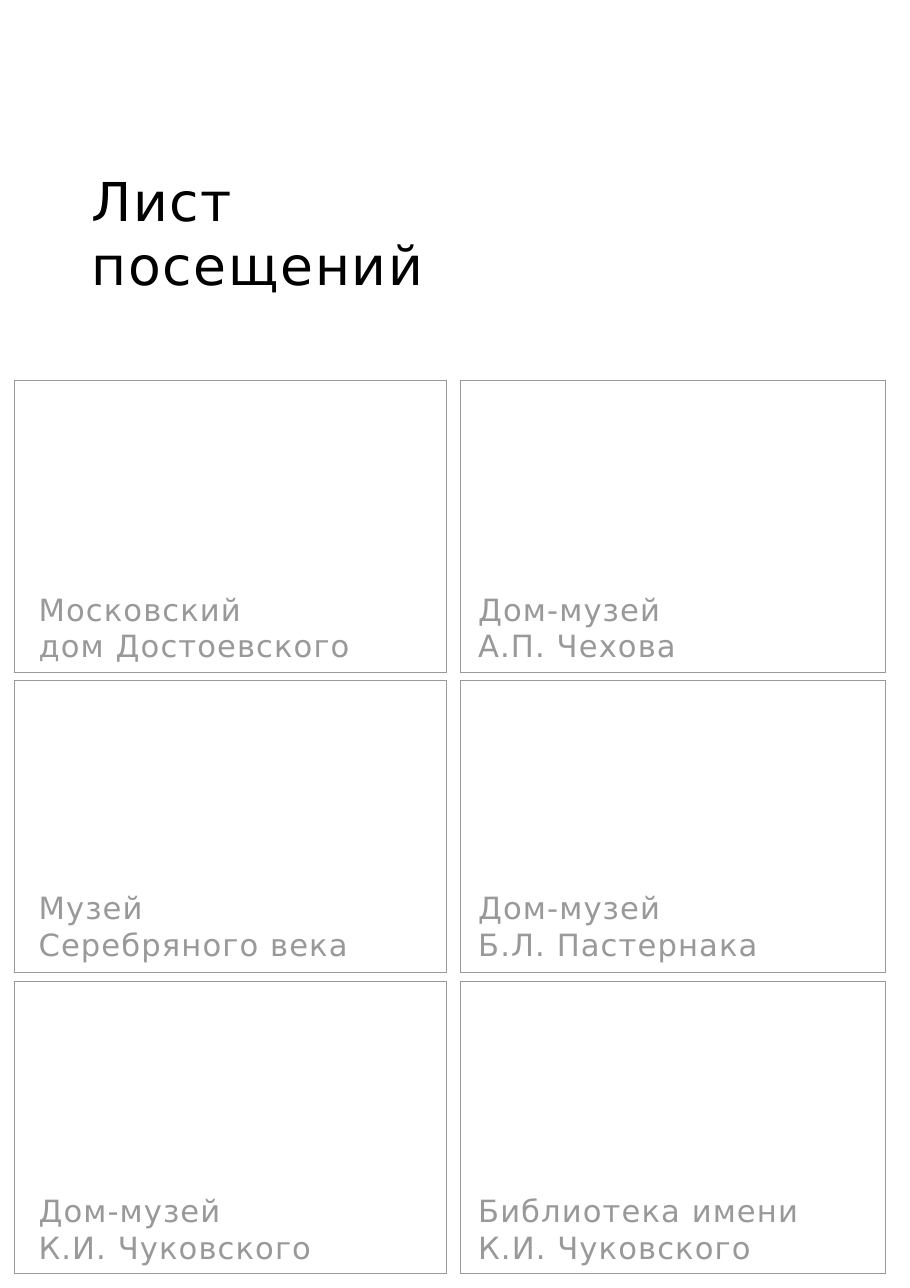
from pptx import Presentation
from pptx.dml.color import RGBColor
from pptx.enum.text import MSO_AUTO_SIZE
from pptx.oxml import parse_xml
from pptx.oxml.ns import nsdecls
from pptx.util import Inches, Pt

SHAPE_TO_FIT_TEXT = MSO_AUTO_SIZE.SHAPE_TO_FIT_TEXT

FONT = "DejaVu Sans"
BLACK = RGBColor(0x00, 0x00, 0x00)
GRAY = RGBColor(0x99, 0x99, 0x99)
BORDER_WIDTH = Pt(0.75)

FRAME_TOP, FRAME_HEIGHT, ROW_PITCH = 3.45, 2.65, 2.73
# Frame left, frame width, caption left
COLUMNS = [(0.13, 3.92, 0.35), (4.18, 3.86, 4.34)]
CAPTION_WIDTH, CAPTION_HEIGHT = 3.55, 0.67

# Caption top, then the two museums of the row
VISITS = [
    (5.36, [["Московский", "дом Достоевского"], ["Дом-музей", "А.П. Чехова"]]),
    (8.07, [["Музей", "Серебряного века"], ["Дом-музей", "Б.Л. Пастернака"]]),
    (10.82, [["Дом-музей", "К.И. Чуковского"],
             ["Библиотека имени", "К.И. Чуковского"]]),
]


def add_lines(slide, lines, left, top, width, height,
              size, leading, tracking, color):
    """Add a text box with one paragraph per line; tracking is in points."""
    box = slide.shapes.add_textbox(
        Inches(left), Inches(top), Inches(width), Inches(height))
    frame = box.text_frame
    frame.word_wrap = True
    frame.auto_size = SHAPE_TO_FIT_TEXT
    frame.margin_left = frame.margin_right = 0
    frame.margin_top = frame.margin_bottom = 0
    for index, line in enumerate(lines):
        paragraph = frame.add_paragraph() if index else frame.paragraphs[0]
        paragraph.line_spacing = Pt(leading)
        run = paragraph.add_run()
        run.text = line
        run.font.name = FONT
        run.font.size = Pt(size)
        run.font.color.rgb = color
        run.font._element.set("spc", str(round(tracking * 100)))


def add_stamp_frame(slide, left, top, width, height):
    """Add a one-cell table that leaves room for a visit stamp."""
    table = slide.shapes.add_table(
        1, 1, Inches(left), Inches(top), Inches(width), Inches(height)).table
    table.first_row = False
    table.horz_banding = False
    cell = table.cell(0, 0)
    properties = cell._tc.get_or_add_tcPr()
    for side in ("lnL", "lnR", "lnT", "lnB"):
        properties.append(parse_xml(
            f'<a:{side} {nsdecls("a")} w="{BORDER_WIDTH}"><a:solidFill>'
            f'<a:srgbClr val="{GRAY}"/></a:solidFill></a:{side}>'))
    cell.fill.background()


def main():
    presentation = Presentation()
    presentation.slide_width = Inches(8.26)
    presentation.slide_height = Inches(11.69)
    slide = presentation.slides.add_slide(presentation.slide_layouts[6])

    add_lines(slide, ["Лист", "посещений"], 0.83, 1.52, 4.41, 1.17,
              size=35, leading=42, tracking=1.1, color=BLACK)

    for row, (caption_top, museums) in enumerate(VISITS):
        frame_top = FRAME_TOP + row * ROW_PITCH
        for (left, width, caption_left), museum in zip(COLUMNS, museums):
            add_stamp_frame(slide, left, frame_top, width, FRAME_HEIGHT)
            add_lines(slide, museum, caption_left, caption_top,
                      CAPTION_WIDTH, CAPTION_HEIGHT,
                      size=20, leading=24, tracking=0.7, color=GRAY)

    presentation.save("out.pptx")


if __name__ == "__main__":
    main()
